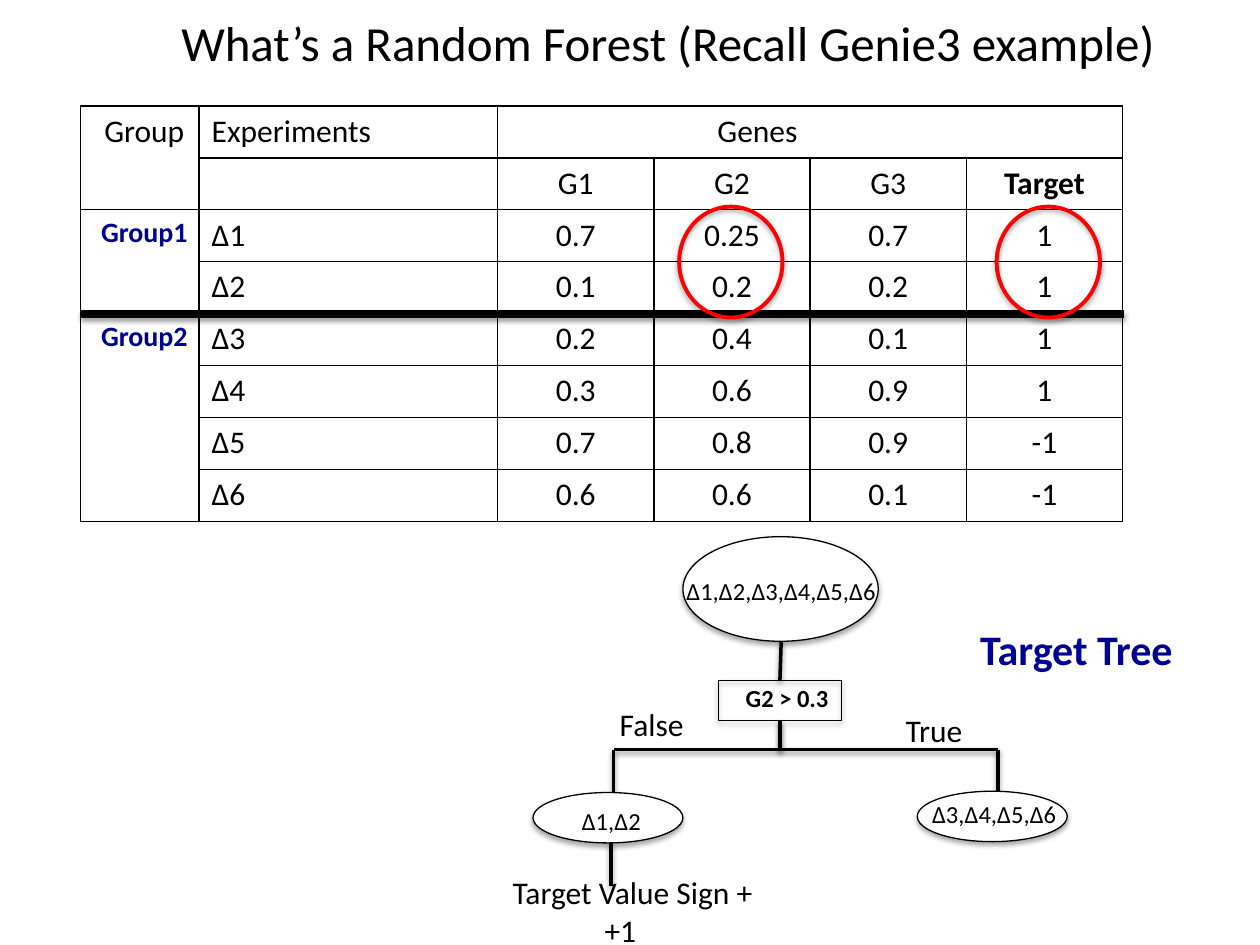
from dataclasses import dataclass

from lxml.etree import SubElement
from pptx import Presentation
from pptx.dml.color import RGBColor
from pptx.enum.shapes import MSO_CONNECTOR, MSO_SHAPE
from pptx.enum.text import MSO_ANCHOR, PP_ALIGN
from pptx.oxml.ns import qn
from pptx.util import Inches, Pt


@dataclass(frozen=True)
class Theme:
    font: str = "Calibri"
    black: RGBColor = RGBColor(0, 0, 0)
    white: RGBColor = RGBColor(255, 255, 255)
    red: RGBColor = RGBColor(255, 0, 0)
    navy: RGBColor = RGBColor(0, 0, 0x90)
    title: int = 28
    heading: int = 24
    body: int = 18
    group: int = 16
    node: int = 14


theme = Theme()


def style_paragraph(p, size, color=theme.black, bold=False, align=PP_ALIGN.LEFT):
    p.alignment = align
    p.font.name, p.font.size, p.font.bold = theme.font, Pt(size), bold
    p.font.color.rgb = color


def add_shadow(s, alpha, distance):
    """Give a shape or connector a soft shadow straight below it."""
    props = s._element.spPr
    effects = props.find(qn("a:effectLst"))
    if effects is None:
        effects = SubElement(props, qn("a:effectLst"))
    shadow = SubElement(effects, qn("a:outerShdw"), blurRad=str(Pt(3.1)),
                        dist=str(Pt(distance)), dir="5400000", rotWithShape="0")
    color = SubElement(shadow, qn("a:srgbClr"), val=str(theme.black))
    SubElement(color, qn("a:alpha"), val=str(alpha * 1000))


prs = Presentation()
prs.slide_width, prs.slide_height = Inches(10), Inches(7.5)
slide = prs.slides.add_slide(prs.slide_layouts[5])

title = slide.shapes.title
title.left, title.top = Inches(0.13), Inches(0.05)
title.width, title.height = Inches(10.34), Inches(0.57)
title.text_frame.text = "What’s a Random Forest (Recall Genie3 example)"
title.text_frame.vertical_anchor = MSO_ANCHOR.MIDDLE
style_paragraph(title.text_frame.paragraphs[0], theme.title, align=PP_ALIGN.CENTER)

# Tables: the groups stand to the left of the experiments
experiments = [
    ["Experiments", "", "Genes", "", ""],
    ["", "G1", "G2", "G3", "Target"],
    ["Δ1", "0.7", "0.25", "0.7", "1"],
    ["Δ2", "0.1", "0.2", "0.2", "1"],
    ["Δ3", "0.2", "0.4", "0.1", "1"],
    ["Δ4", "0.3", "0.6", "0.9", "1"],
    ["Δ5", "0.7", "0.8", "0.9", "-1"],
    ["Δ6", "0.6", "0.6", "0.1", "-1"],
]
groups = [["Group"], [""], ["Group1"], [""], ["Group2"], [""], [""], [""]]
group_starts, group_ends = (0, 2, 4), (1, 3, 7)

for rows, left, widths in [(experiments, 1.58, [2.37] + [1.24] * 4), (groups, 0.64, [1.01])]:
    table = slide.shapes.add_table(len(rows), len(widths), Inches(left), Inches(0.84),
                                   Inches(sum(widths)), Inches(3.3)).table
    table.first_row = table.horz_banding = False
    for column, width in zip(table.columns, widths):
        column.width = Inches(width)
    for i, row in enumerate(rows):
        for j, text in enumerate(row):
            cell = table.cell(i, j)
            cell.text = text
            size, color, bold = theme.body, theme.black, text == "Target"
            align = PP_ALIGN.CENTER
            sides = "LRTB"
            if rows is groups:
                sides = "L" + "T" * (i in group_starts) + "B" * (i in group_ends)
                if i > 1:
                    size, color, bold = theme.group, theme.navy, True
            elif j == 0:
                align = PP_ALIGN.LEFT
            elif i == 0:
                align = PP_ALIGN.RIGHT
                sides = "TB" + "L" * (j == 1) + "R" * (j == 4)
            style_paragraph(cell.text_frame.paragraphs[0], size, color, bold, align)
            tc_pr = cell._tc.get_or_add_tcPr()
            for side in "LRTB":
                ln = SubElement(tc_pr, qn(f"a:ln{side}"), w=str(Pt(1)))
                if side in sides:
                    fill = SubElement(ln, qn("a:solidFill"))
                    SubElement(fill, qn("a:srgbClr"), val=str(theme.black))
                else:
                    SubElement(ln, qn("a:noFill"))
            cell.fill.background()

# Group divider and tree branches: start, end, width
root_x, false_x, true_x, branch_y, leaf_y = 6.19, 4.87, 7.92, 5.95, 6.29
lines = [
    (0.64, 2.49, 8.92, 2.49, 4.5),
    (6.2, 5.09, root_x, 5.4, 2),
    (true_x, branch_y, true_x, leaf_y, 2),
    (false_x, branch_y, false_x, leaf_y, 2),
    (4.85, 6.69, 4.85, 7.03, 2),
]
connectors = []
for x1, y1, x2, y2, width in lines:
    line = slide.shapes.add_connector(MSO_CONNECTOR.STRAIGHT, Inches(x1), Inches(y1),
                                      Inches(x2), Inches(y2))
    connectors.append((line, width))

# Each elbow leaves the split downwards, so its frame is a turned one
drop = branch_y - 5.72
for leaf_x, angle, side in [(true_x, 270, -1), (false_x, 90, 1)]:
    span = abs(leaf_x - root_x)
    x, y = (root_x + leaf_x) / 2, branch_y - drop / 2
    elbow = slide.shapes.add_connector(
        MSO_CONNECTOR.ELBOW, Inches(x - side * drop / 2), Inches(y - span / 2),
        Inches(x + side * drop / 2), Inches(y + span / 2))
    elbow._element.spPr.find(qn("a:prstGeom")).set("prst", "bentConnector2")
    elbow._element.spPr.find(qn("a:xfrm")).set("rot", str(angle * 60000))
    connectors.append((elbow, 2))

for line, width in connectors:
    line.line.color.rgb, line.line.width = theme.black, Pt(width)
    add_shadow(line, 38, 1.6)

# Highlight rings, tree nodes and the split box
oval, box = MSO_SHAPE.OVAL, MSO_SHAPE.RECTANGLE
shapes = [
    (oval, 5.39, 1.64, 0.82, 0.88, None, theme.red, 2.25),
    (oval, 7.91, 1.64, 0.82, 0.88, None, theme.red, 2.25),
    (oval, 5.42, 4.26, 1.55, 0.83, theme.white, theme.black, 0.75),
    (box, 5.7, 5.4, 0.98, 0.32, None, theme.black, 0.75),
    (oval, 4.23, 6.29, 1.19, 0.4, theme.white, theme.black, 0.75),
    (oval, 7.28, 6.28, 1.19, 0.4, theme.white, theme.black, 0.75),
]
for kind, x, y, w, h, fill, color, width in shapes:
    s = slide.shapes.add_shape(kind, Inches(x), Inches(y), Inches(w), Inches(h))
    if fill is None:
        s.fill.background()
    else:
        s.fill.solid()
        s.fill.fore_color.rgb = fill
    s.line.color.rgb, s.line.width = color, Pt(width)
    s.shadow.inherit = False
    add_shadow(s, 35, 1.8)

labels = [
    ("Δ1,Δ2,Δ3,Δ4,Δ5,Δ6", 5.35, 4.52, 2.47, 0.34, theme.node, theme.black, False),
    ("G2 > 0.3", 5.82, 5.37, 1.44, 0.34, theme.node, theme.black, True),
    ("Δ1,Δ2", 4.52, 6.35, 0.86, 0.34, theme.node, theme.black, False),
    ("Δ3,Δ4,Δ5,Δ6", 7.3, 6.29, 2.43, 0.34, theme.node, theme.black, False),
    ("True", 7.09, 5.59, 0.83, 0.4, theme.body, theme.black, False),
    ("False", 4.82, 5.55, 0.83, 0.4, theme.body, theme.black, False),
    ("Target Value Sign +\n+1", 3.97, 6.88, 2.47, 0.71, theme.body, theme.black, False),
    ("Target Tree", 7.68, 4.9, 2.23, 0.5, theme.heading, theme.navy, True),
]
for text, x, y, w, h, size, color, bold in labels:
    tf = slide.shapes.add_textbox(Inches(x), Inches(y), Inches(w), Inches(h)).text_frame
    tf.word_wrap = True
    tf.text = text
    for p in tf.paragraphs:
        style_paragraph(p, size, color, bold)
    for p in tf.paragraphs[1:]:
        p._p.get_or_add_pPr().set("marL", str(Inches(0.73)))

prs.save("out.pptx")
